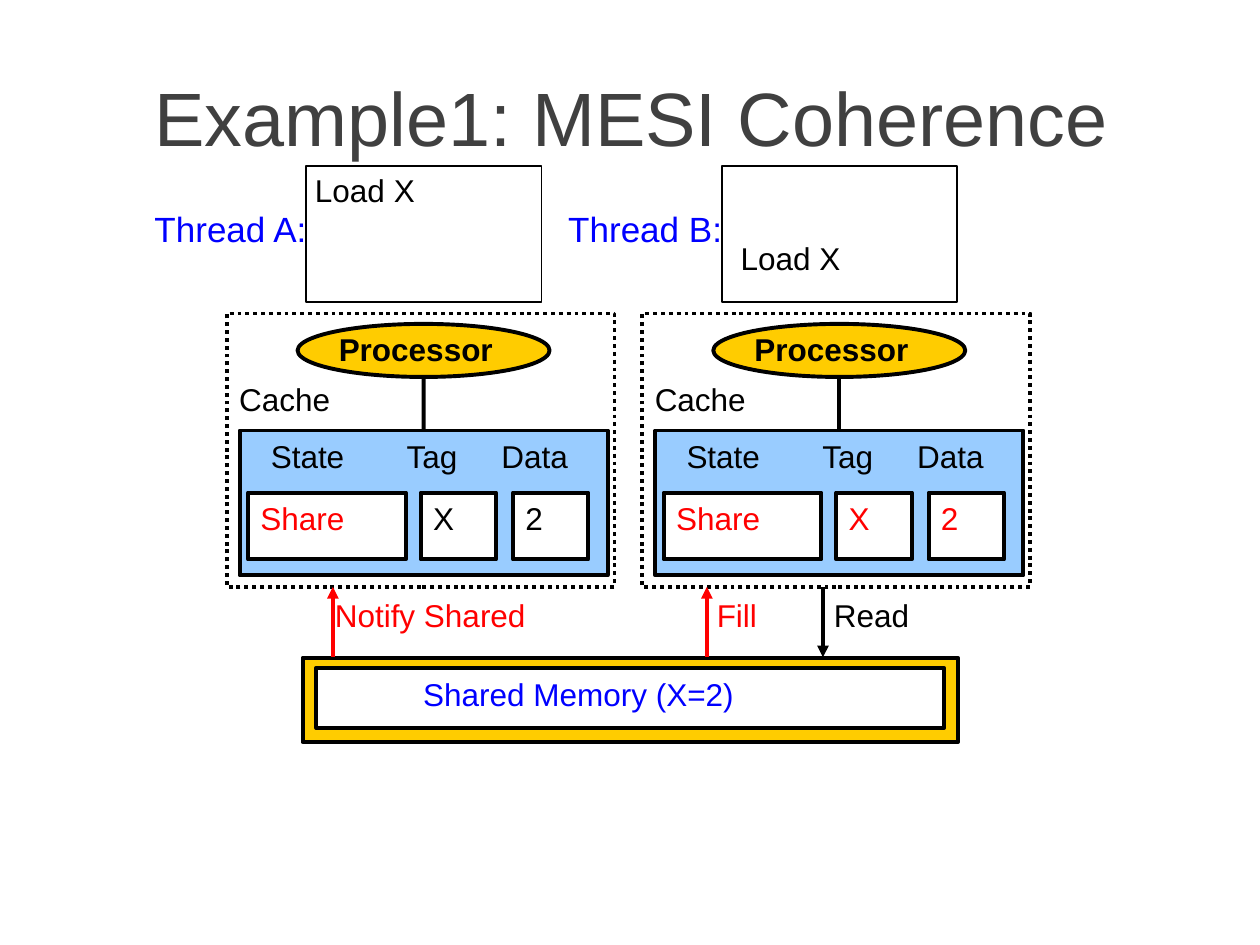
from pptx import Presentation
from pptx import util as u
from pptx.dml.color import RGBColor
from pptx.enum import dml, shapes, text
from pptx.oxml.ns import qn
from lxml import etree

BLACK = RGBColor(0x00, 0x00, 0x00)
WHITE = RGBColor(0xFF, 0xFF, 0xFF)
GRAY = RGBColor(0x40, 0x40, 0x40)
RED = RGBColor(0xFF, 0x00, 0x00)
BLUE = RGBColor(0x00, 0x00, 0xFF)
GOLD = RGBColor(0xFF, 0xCC, 0x00)
SKY = RGBColor(0x99, 0xCC, 0xFF)

RECTANGLE = shapes.MSO_SHAPE.RECTANGLE
OVAL = shapes.MSO_SHAPE.OVAL
LEFT, CENTER, RIGHT = text.PP_ALIGN.LEFT, text.PP_ALIGN.CENTER, text.PP_ALIGN.RIGHT
TOP, MIDDLE = text.MSO_ANCHOR.TOP, text.MSO_ANCHOR.MIDDLE
FIT, FIXED = text.MSO_AUTO_SIZE.SHAPE_TO_FIT_TEXT, text.MSO_AUTO_SIZE.NONE

NODE_LEFT, NODE_TOP, NODE_PITCH = 2.82, 3.35, 8.38


def cm(*lengths):
    return [u.Cm(length) for length in lengths]


def write(shape, words, color, size=18, bold=False, align=LEFT, anchor=TOP,
          wrap=True, fit=FIT):
    frame = shape.text_frame
    frame.text = words
    frame.word_wrap = wrap
    frame.auto_size = fit
    frame.vertical_anchor = anchor
    para = frame.paragraphs[0]
    para.alignment = align
    span = para.runs[0]
    span.font.name = "Arial"
    span.font.size = u.Pt(size)
    span.font.bold = bold
    span.font.color.rgb = color


def add_label(parts, box, words, color=BLACK, **style):
    label = parts.add_textbox(*cm(*box))
    write(label, words, color, **{"wrap": False, **style})


def add_block(parts, box, fill=None, kind=RECTANGLE, width=2.25, dash=None):
    block = parts.add_shape(kind, *cm(*box))
    block.shadow.inherit = False
    if fill is None:
        block.fill.background()
    else:
        block.fill.solid()
        block.fill.fore_color.rgb = fill
    block.line.color.rgb = BLACK
    block.line.width = u.Pt(width)
    if dash:
        block.line.dash_style = dash
    return block


def add_line(parts, x, top, bottom, color=BLACK, arrow=None):
    line = parts.add_connector(shapes.MSO_CONNECTOR.STRAIGHT,
                               *cm(x, top, x, bottom))
    line.line.color.rgb = color
    line.line.width = u.Pt(2.25)
    if arrow:
        etree.SubElement(line.line._get_or_add_ln(), qn(arrow), type="triangle")
    etree.SubElement(line._element.spPr, qn("a:effectLst"))
    return line


def add_title(page, box):
    title = page.shapes.title
    title.left, title.top, title.width, title.height = cm(*box)
    write(title, "Example1: MESI Coherence", GRAY, size=43.2, align=CENTER,
          anchor=MIDDLE, fit=FIXED)


def add_memory(page, left, top):
    add_block(page.shapes, (left, top, 13.21, 1.7), GOLD)
    add_block(page.shapes, (left + 0.28, top + 0.2, 12.65, 1.22), WHITE)
    add_label(page.shapes, (left + 2.18, top + 0.23, 8.86, 1.27),
              "Shared Memory (X=2)", BLUE)


def add_cache(page, left, top, fields):
    parts = page.shapes.add_group_shape().shapes
    cache = add_block(parts, (left, top, 7.42, 2.92), SKY)
    columns = [("State", 0.38, 2.59, 0.17, 3.18),
               ("Tag", 3.12, 2.46, 3.65, 1.52),
               ("Data", 5.03, 2.46, 5.51, 1.52)]
    for (name, name_x, name_width, cell_x, cell_width), (value, color) in zip(
            columns, fields):
        cell = add_block(parts, (left + cell_x, top + 1.25, cell_width, 1.35), WHITE)
        write(cell, value, color)
        add_label(parts, (left + name_x, top, name_width, 1.27), name, wrap=True)
    return cache


def add_node(page, left, top, thread, load_x, load_y, fields):
    parts = page.shapes
    add_block(parts, (left + 3.18, top + 3.18, 5.08, 1.07), GOLD, kind=OVAL)
    add_label(parts, (left + 1.75, top + 4.19, 2.97, 1.27), "Cache")
    add_label(parts, (left + 3.76, top + 3.18, 3.61, 1.02), "Processor",
              bold=True, anchor=MIDDLE)
    add_block(parts, (left + 3.35, top, 4.75, 2.74), width=1)
    add_block(parts, (left + 1.75, top + 2.97, 7.82, 5.51),
              dash=dml.MSO_LINE.ROUND_DOT)
    cache = add_cache(page, left + 2.01, top + 5.33, fields)
    link = add_line(parts, left + 5.72, top + 4.27, top + 5.33)
    link.end_connect(cache, 0)
    add_label(parts, (left, top + 0.71, 3.61, 1.09), thread, BLUE, size=20,
              align=RIGHT)
    add_label(parts, (left + load_x, top + load_y, 3.2, 1.27), "Load X")


def add_messages(page, top):
    messages = [("Read", 16.59, 16.56, 2.54, BLACK, "a:tailEnd"),
                ("Fill", 14.25, 14.2, 1.6, RED, "a:headEnd"),
                ("Notify Shared", 6.71, 6.5, 6.63, RED, "a:headEnd")]
    for words, x, label_x, width, color, arrow in messages:
        add_label(page.shapes, (label_x, top + 0.06, width, 1.27), words, color)
        add_line(page.shapes, x, top, top + 1.42, color, arrow)


def main():
    deck = Presentation()
    deck.slide_width, deck.slide_height = cm(25.4, 19.05)
    page = deck.slides.add_slide(deck.slide_layouts[5])
    add_title(page, (0.76, 1.7, 23.93, 1.27))
    add_memory(page, 6.1, 13.26)
    nodes = [("Thread A:", 3.28, -0.03, (RED, BLACK, BLACK)),
             ("Thread B:", 3.48, 1.35, (RED, RED, RED))]
    for index, (thread, load_x, load_y, colors) in enumerate(nodes):
        add_node(page, NODE_LEFT + index * NODE_PITCH, NODE_TOP, thread,
                 load_x, load_y, list(zip(("Share", "X", "2"), colors)))
    add_messages(page, 11.83)
    deck.save("out.pptx")


if __name__ == "__main__":
    main()
